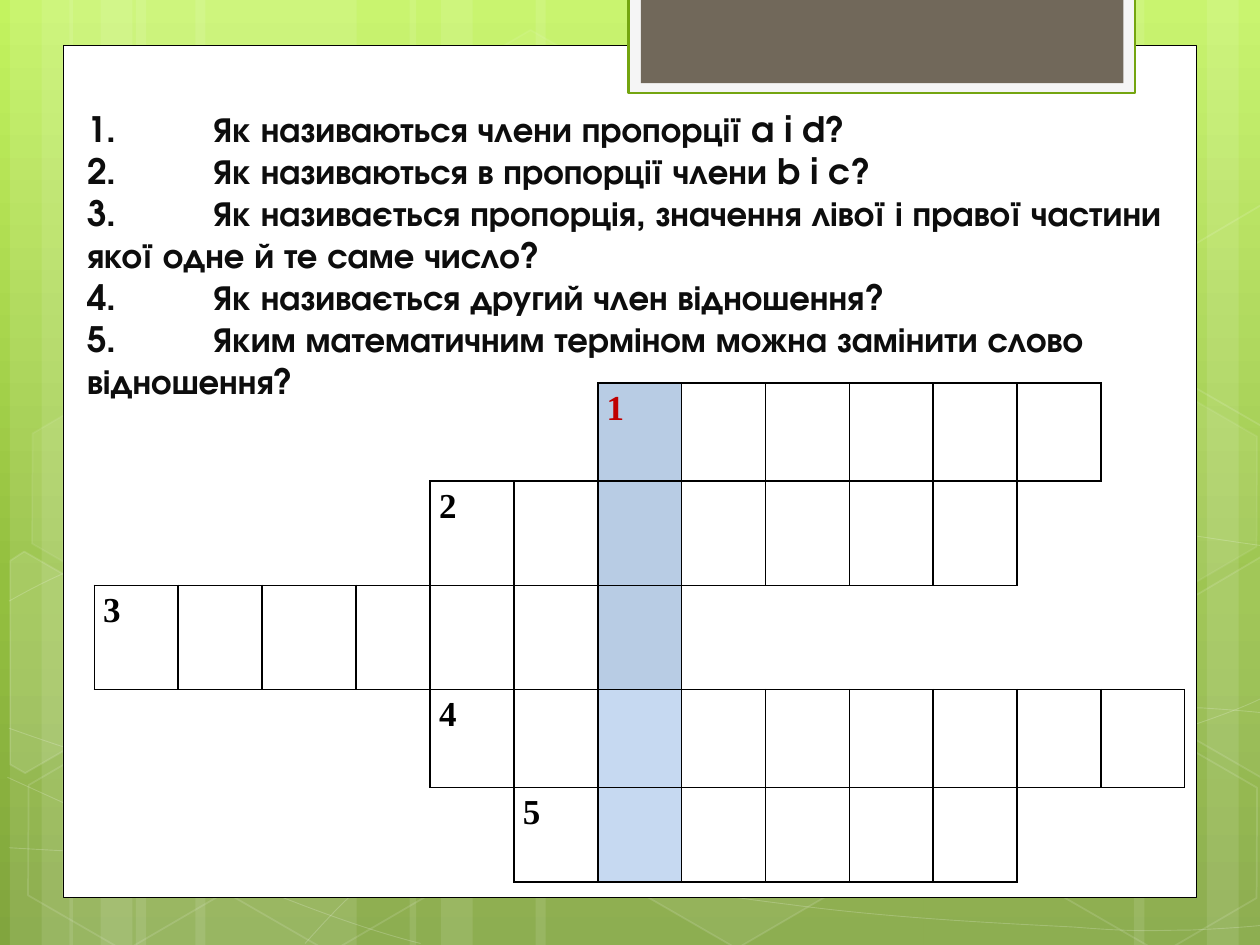
from lxml import etree
from pptx import Presentation
from pptx.dml.color import RGBColor
from pptx.enum.shapes import MSO_SHAPE
from pptx.enum.text import MSO_ANCHOR, MSO_AUTO_SIZE, PP_ALIGN
from pptx.oxml.ns import qn
from pptx.util import Cm, Pt

RECTANGLE, HEXAGON = MSO_SHAPE.RECTANGLE, MSO_SHAPE.HEXAGON
TITLE_ONLY = 5
NO_GRID_STYLE = "{2D5ABB26-0587-4C30-8999-92F81FD0307C}"
COLORS = {
    "white": "FFFFFF", "black": "000000", "text": "0D0D0D", "red": "C00000",
    "frame": "F5F5F5", "green": "74A510", "brown": "71685A",
    "blue": "B8CCE4", "light blue": "C6D9F1",
}
BACKGROUND = [(0, "C3F35F"), (62, "93BF3F"), (100, "81A53E")]

QUESTIONS = [
    "Як називаються члени пропорції a i d?",
    "Як називаються в пропорції члени b i c?",
    "Як називається пропорція, значення лівої і правої частини якої одне й те саме число?",
    "Як називається другий член відношення?",
    "Яким математичним терміном можна замінити слово відношення?",
]

# Crossword words: first column, number of letters, fill of the key column
WORDS = [(6, 6, "blue"), (4, 7, "blue"), (0, 7, "blue"),
         (4, 9, "light blue"), (5, 6, "light blue")]
KEY_COLUMN = 6
COLUMN_WIDTHS = [1.69] * 2 + [1.9, 1.49] + [1.69] * 9
ROW_HEIGHTS = [1.98, 2.1, 2.1, 1.98, 1.9]

# Vertical bands: left, width (cm)
BANDS = [(2.74, 4.45), (0.2, 1.27), (0.84, 2.11), (3.94, 4.45), (1.4, 1.27),
         (2.03, 2.11), (18.62, 4.45), (24.33, 1.27), (22.86, 2.11),
         (10.8, 7.82), (8.26, 1.27), (8.89, 2.11)]

# Bezier curves: a start point, then three points for each segment (cm)
CURVES = [
    [(0.18, 17.09), (1.55, 17.17), (2.92, 17.25), (4.83, 17.22),
     (6.73, 17.2), (9.09, 17.15), (11.63, 16.89), (14.17, 16.64),
     (17.78, 16.15), (20.12, 15.67), (22.43, 15.19), (24.82, 14.43), (25.58, 14)],
    [(0.18, 12.12), (0.91, 11.71), (1.65, 11.33), (3.07, 10.95),
     (4.52, 10.57), (6.58, 10.01), (8.81, 9.83), (11.07, 9.65),
     (13.82, 9.63), (16.61, 9.83), (19.41, 10.03), (24.05, 10.82), (25.58, 11.02)],
    [(0.15, 15.67), (3.23, 17.07), (6.27, 18.47), (8.48, 19.02)],
    [(0.18, 14.68), (0.97, 14.96), (1.78, 15.24), (3.25, 15.65),
     (4.72, 16.03), (6.93, 16.66), (9.07, 17.09), (11.18, 17.53),
     (13.84, 17.98), (15.95, 18.24), (18.06, 18.52), (20.32, 18.62),
     (21.67, 18.69), (22.99, 18.8), (23.34, 18.75), (24, 18.75),
     (24.66, 18.72), (25.12, 18.69), (25.58, 18.64)],
    [(6.15, 19.02), (6.6, 18.52), (7.06, 18.01), (7.67, 17.55),
     (8.28, 17.09), (9.14, 16.59), (9.86, 16.23), (10.57, 15.88),
     (11, 15.72), (11.94, 15.47), (12.85, 15.22), (14.55, 14.86),
     (15.44, 14.68), (16.36, 14.5), (16.48, 14.5), (17.27, 14.45),
     (18.06, 14.38), (19.3, 14.3), (20.17, 14.27), (21.06, 14.25),
     (22.5, 14.27), (22.5, 14.27), (23.07, 14.27), (23.64, 14.27),
     (24.21, 14.27), (24.66, 14.3), (25.1, 14.33), (25.55, 14.38)],
]

# Hexagons: left, top, fill opacity, line opacity (percent)
HEXAGONS = [(8.48, 0.91, 4, 8), (12.62, 14.96, 6, 12), (0.28, 15.01, 0, 12),
            (0.36, 7.92, 7, 8), (4.42, 15.04, 0, 12), (19.13, 11.51, 10, 12),
            (21.18, 15.06, 0, 12), (21.18, 7.98, 7, 8)]
# Hexagons cut by the slide edge, before their turn: left, top, corners, fill opacity
LEFT_CUT = [(0, 0.3), (0.15, 0), (2.4, 0), (3.5, 1.95), (2.4, 3.86), (2.05, 3.86)]
RIGHT_CUT = [(0, 1.93), (1.09, 0), (1.33, 0), (3.45, 3.68), (3.35, 3.86), (1.11, 3.86)]
CUT_HEXAGONS = [(-0.84, 11.66, LEFT_CUT, 10), (23.29, 11.28, RIGHT_CUT, 4),
                (23.29, 4.19, RIGHT_CUT, 0)]
HEXAGON_TURN = 30


def paint(fill, color, opacity=100):
    """Give a fill one colour, or none when the opacity is zero."""
    if color is None or opacity == 0:
        fill.background()
        return
    fill.solid()
    fill.fore_color.rgb = RGBColor.from_string(COLORS[color])
    if opacity < 100:
        color_element = fill._xPr.find(".//" + qn("a:srgbClr"))
        etree.SubElement(color_element, qn("a:alpha"), val=str(opacity * 1000))


def style(shape, fill=None, opacity=100, line=None, line_width=1, line_opacity=100):
    shape.shadow.inherit = False
    paint(shape.fill, fill, opacity)
    if line:
        shape.line.width = Pt(line_width)
    paint(shape.line.fill, line, line_opacity)
    return shape


def add_shape(slide, kind, left, top, width, height, **look):
    shape = slide.shapes.add_shape(kind, Cm(left), Cm(top), Cm(width), Cm(height))
    return style(shape, **look)


def add_outline(slide, points, close, **look):
    points = [(Cm(x), Cm(y)) for x, y in points]
    builder = slide.shapes.build_freeform(*points[0])
    builder.add_line_segments(points[1:], close=close)
    return style(builder.convert_to_shape(), **look)


def bend(shape):
    """Turn every three line segments of an outline into one Bezier segment."""
    lines = list(shape.element.iter(qn("a:lnTo")))
    for first in range(0, len(lines), 3):
        segment = etree.Element(qn("a:cubicBezTo"))
        lines[first].addprevious(segment)
        for line in lines[first:first + 3]:
            segment.append(line[0])
            line.getparent().remove(line)


def write(paragraph, text, font, color, size=20, spacing=1.0, tab=None):
    paragraph.alignment = PP_ALIGN.LEFT
    paragraph.line_spacing = spacing
    if tab:
        tabs = etree.SubElement(paragraph._p.get_or_add_pPr(), qn("a:tabLst"))
        etree.SubElement(tabs, qn("a:tab"), pos=str(Cm(tab)), algn="l")
    run = paragraph.add_run()
    run.text = text
    run.font.name, run.font.size, run.font.bold = font, Pt(size), True
    run.font.color.rgb = RGBColor.from_string(COLORS[color])


def add_background(slide):
    fill = slide.background.fill
    fill.gradient()
    fill.gradient_angle = 270
    stops = slide.element.find(".//" + qn("a:gsLst"))
    stops.clear()
    for position, color in BACKGROUND:
        stop = etree.SubElement(stops, qn("a:gs"), pos=str(position * 1000))
        etree.SubElement(stop, qn("a:srgbClr"), val=color)


def add_decoration(slide):
    for left, width in BANDS:
        add_shape(slide, RECTANGLE, left, 0, width, 19.05, fill="white", opacity=10)
    for curve in CURVES:
        bend(add_outline(slide, curve, False,
                         line="white", line_width=0.5, line_opacity=20))
    for left, top, opacity, line_opacity in HEXAGONS:
        hexagon = add_shape(slide, HEXAGON, left, top, 4.45, 3.86, fill="white",
                            opacity=opacity, line="white", line_opacity=line_opacity)
        hexagon.adjustments[0], hexagon.adjustments[1] = 0.285, 1.155
        hexagon.rotation = HEXAGON_TURN
    for left, top, corners, opacity in CUT_HEXAGONS:
        points = [(left + x, top + y) for x, y in corners]
        cut = add_outline(slide, points, True, fill="white", opacity=opacity,
                          line="white", line_opacity=12)
        cut.rotation = HEXAGON_TURN
    add_shape(slide, RECTANGLE, 1.27, 0.91, 22.86, 17.18,
              fill="white", line="black", line_width=0.5)
    add_shape(slide, RECTANGLE, 12.67, -0.05, 10.21, 1.93,
              fill="frame", line="green", line_width=1.25)
    add_shape(slide, RECTANGLE, 12.92, -0.05, 9.73, 1.73, fill="brown")


def add_questions(slide):
    title = slide.shapes.title
    title.element.getparent().append(title.element)  # in front of the panel
    title.left, title.top, title.width, title.height = Cm(1.5), Cm(2.51), Cm(22.4), Cm(7.39)
    frame = title.text_frame
    frame.word_wrap, frame.auto_size = True, MSO_AUTO_SIZE.NONE
    frame.vertical_anchor, frame.margin_bottom = MSO_ANCHOR.BOTTOM, Cm(1.8)
    for number, question in enumerate(QUESTIONS, 1):
        paragraph = frame.paragraphs[0] if number == 1 else frame.add_paragraph()
        write(paragraph, f"{number}.\t{question}", "TeX Gyre Adventor", "text", tab=2.54)


def in_word(row, column):
    if not 0 <= row < len(WORDS):
        return False
    first, length, _ = WORDS[row]
    return first <= column < first + length


def add_borders(cell, row, column):
    """Draw each edge that touches a letter square."""
    properties = cell._tc.get_or_add_tcPr()
    sides = [("a:lnL", 0, -1), ("a:lnR", 0, 1), ("a:lnT", -1, 0), ("a:lnB", 1, 0)]
    for index, (tag, down, right) in enumerate(sides):
        if in_word(row, column) or in_word(row + down, column + right):
            line = etree.Element(qn(tag), w=str(Pt(1)))
            fill = etree.SubElement(line, qn("a:solidFill"))
            etree.SubElement(fill, qn("a:srgbClr"), val=COLORS["black"])
        else:
            line = etree.Element(qn(tag), w="0")
            etree.SubElement(line, qn("a:noFill"))
        properties.insert(index, line)


def add_crossword(slide):
    frame = slide.shapes.add_table(len(WORDS), len(COLUMN_WIDTHS), Cm(1.9), Cm(7.72),
                                   Cm(sum(COLUMN_WIDTHS)), Cm(sum(ROW_HEIGHTS)))
    table = frame.table
    table.first_row = table.horz_banding = False
    table._tbl.tblPr.find(qn("a:tableStyleId")).text = NO_GRID_STYLE
    for column, width in enumerate(COLUMN_WIDTHS):
        table.columns[column].width = Cm(width)
    for row, (first, _, key_fill) in enumerate(WORDS):
        table.rows[row].height = Cm(ROW_HEIGHTS[row])
        for column in range(len(COLUMN_WIDTHS)):
            cell = table.cell(row, column)
            cell.margin_left = cell.margin_right = Cm(0.18)
            cell.margin_top = cell.margin_bottom = 0
            paint(cell.fill, key_fill if column == KEY_COLUMN else None)
            add_borders(cell, row, column)
            if column == first:
                write(cell.text_frame.paragraphs[0], str(row + 1), "Times New Roman",
                      "red" if column == KEY_COLUMN else "black", spacing=1.15)


def main():
    presentation = Presentation()
    presentation.slide_width, presentation.slide_height = Cm(25.4), Cm(19.05)
    slide = presentation.slides.add_slide(presentation.slide_layouts[TITLE_ONLY])
    add_background(slide)
    add_decoration(slide)
    add_questions(slide)
    add_crossword(slide)
    presentation.save("out.pptx")


if __name__ == "__main__":
    main()
